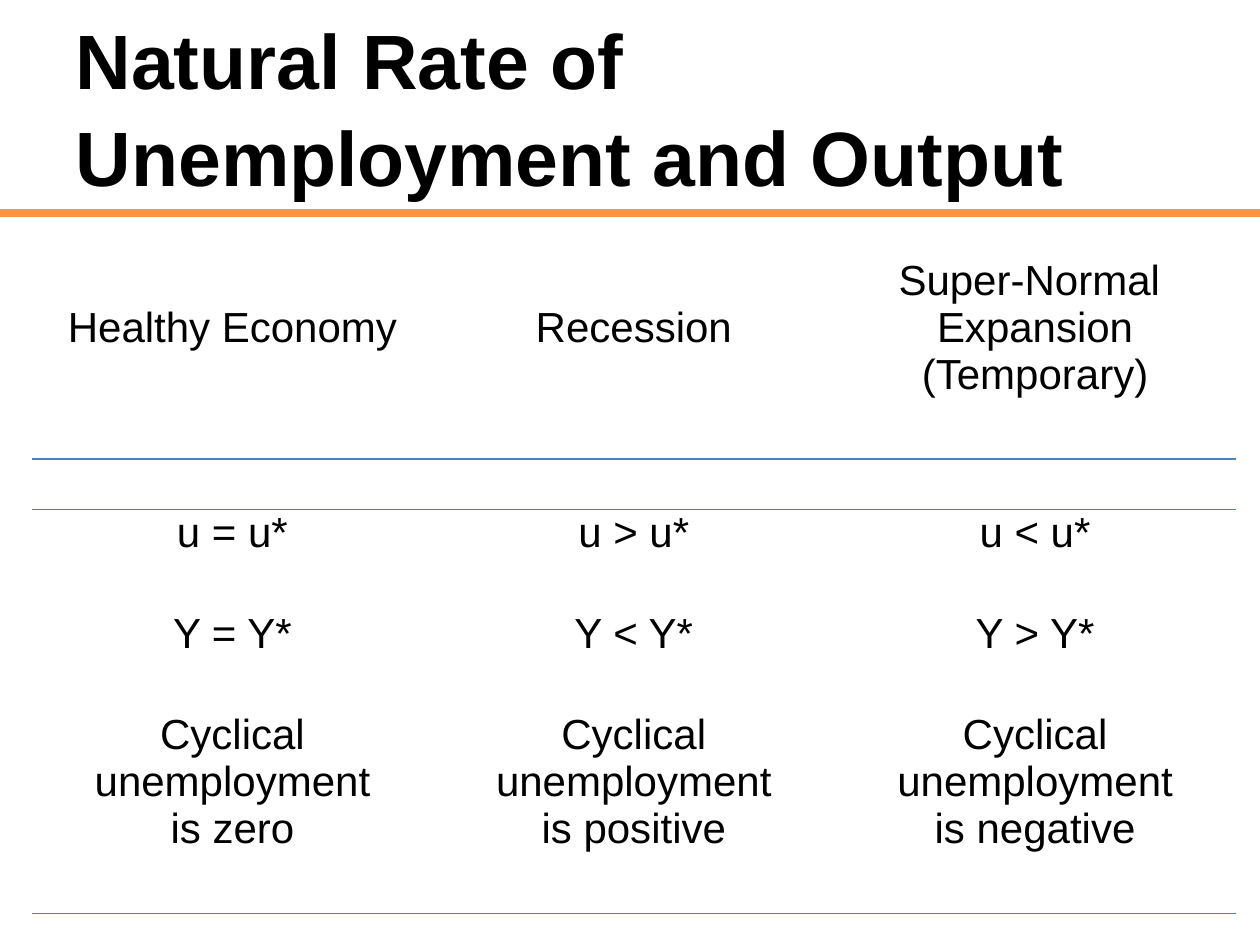
from lxml import etree
from pptx import Presentation
from pptx.dml.color import RGBColor
from pptx.enum import shapes, text
from pptx.oxml import ns
from pptx.util import Cm, Pt

# Content
TITLE = "Natural Rate of Unemployment and Output"
HEADINGS = ["Healthy Economy", "Recession", "Super-Normal \nExpansion (Temporary)"]
UNEMPLOYMENT = ["u = u*", "u > u*", "u < u*"]
OUTPUT = ["Y = Y*", "Y < Y*", "Y > Y*"]
CYCLICAL = [f"Cyclical unemployment\nis {sign}" for sign in ("zero", "positive", "negative")]
GAP = [""] * 3
ROWS = [HEADINGS, GAP, GAP, UNEMPLOYMENT, GAP, OUTPUT, GAP, CYCLICAL, GAP]
TALL_ROWS = (HEADINGS, CYCLICAL)
RULED_ROWS = (1, 8)

FONT, BLACK, ORANGE, BLUE = "Arial", "000000", "F79646", "4F81BD"
NO_STYLE = "{2D5ABB26-0587-4C30-8999-92F81FD0307C}"


def rgb(value):
    return RGBColor.from_string(value)


def style_text(para, size, align, bold=False):
    para.alignment = align
    para.font.size = Pt(size)
    for span in para.runs:
        span.font.name = FONT
        span.font.size = Pt(size)
        span.font.bold = bold
        span.font.color.rgb = rgb(BLACK)


def add_border(cell, side, color, width):
    line = etree.SubElement(cell._tc.get_or_add_tcPr(), ns.qn(f"a:{side}"), w=str(Pt(width)))
    fill = etree.SubElement(line, ns.qn("a:solidFill"))
    etree.SubElement(fill, ns.qn("a:srgbClr"), val=color)


deck = Presentation()
deck.slide_width, deck.slide_height = Cm(25.4), Cm(19.05)
page = deck.slides.add_slide(deck.slide_layouts[5])

# Rule under the title
rule = page.shapes.add_connector(
    shapes.MSO_CONNECTOR.STRAIGHT, 0, Cm(4.29), deck.slide_width, Cm(4.29))
rule.line.color.rgb = rgb(ORANGE)
rule.line.width = Pt(4.5)
etree.SubElement(rule._element.spPr, ns.qn("a:effectLst"))

# Title
title = page.shapes.title
title.left, title.top, title.width, title.height = Cm(1.27), 0, Cm(22.86), Cm(4.24)
frame = title.text_frame
frame.text = TITLE
frame.word_wrap = True
frame.auto_size = text.MSO_AUTO_SIZE.NONE
frame.vertical_anchor = text.MSO_ANCHOR.MIDDLE
frame.paragraphs[0].line_spacing = 1.05
style_text(frame.paragraphs[0], 44, text.PP_ALIGN.LEFT, bold=True)

# Comparison table
heights = [Cm(3.05) if row in TALL_ROWS else Cm(1.02) for row in ROWS]
table = page.shapes.add_table(
    len(ROWS), 3, Cm(0.64), Cm(5.18), Cm(24.27), sum(heights)).table
table.first_row = table.horz_banding = False
table._tbl.tblPr.find(ns.qn("a:tableStyleId")).text = NO_STYLE

for r, (row, height) in enumerate(zip(ROWS, heights)):
    table.rows[r].height = height
    for c, words in enumerate(row):
        cell = table.cell(r, c)
        cell.margin_left = cell.margin_right = Cm(0.18)
        cell.margin_top = cell.margin_bottom = 0
        if row is HEADINGS:
            cell.vertical_anchor = text.MSO_ANCHOR.MIDDLE
            cell.margin_bottom = Cm(0.2)
        if r - 1 in RULED_ROWS:
            add_border(cell, "lnT", BLUE, 1)
        if r in RULED_ROWS:
            add_border(cell, "lnB", BLUE, 1)
        cell.fill.background()
        cell.text_frame.text = words
        for para in cell.text_frame.paragraphs:
            style_text(para, 24 if words else 18, text.PP_ALIGN.CENTER)

deck.save("out.pptx")
